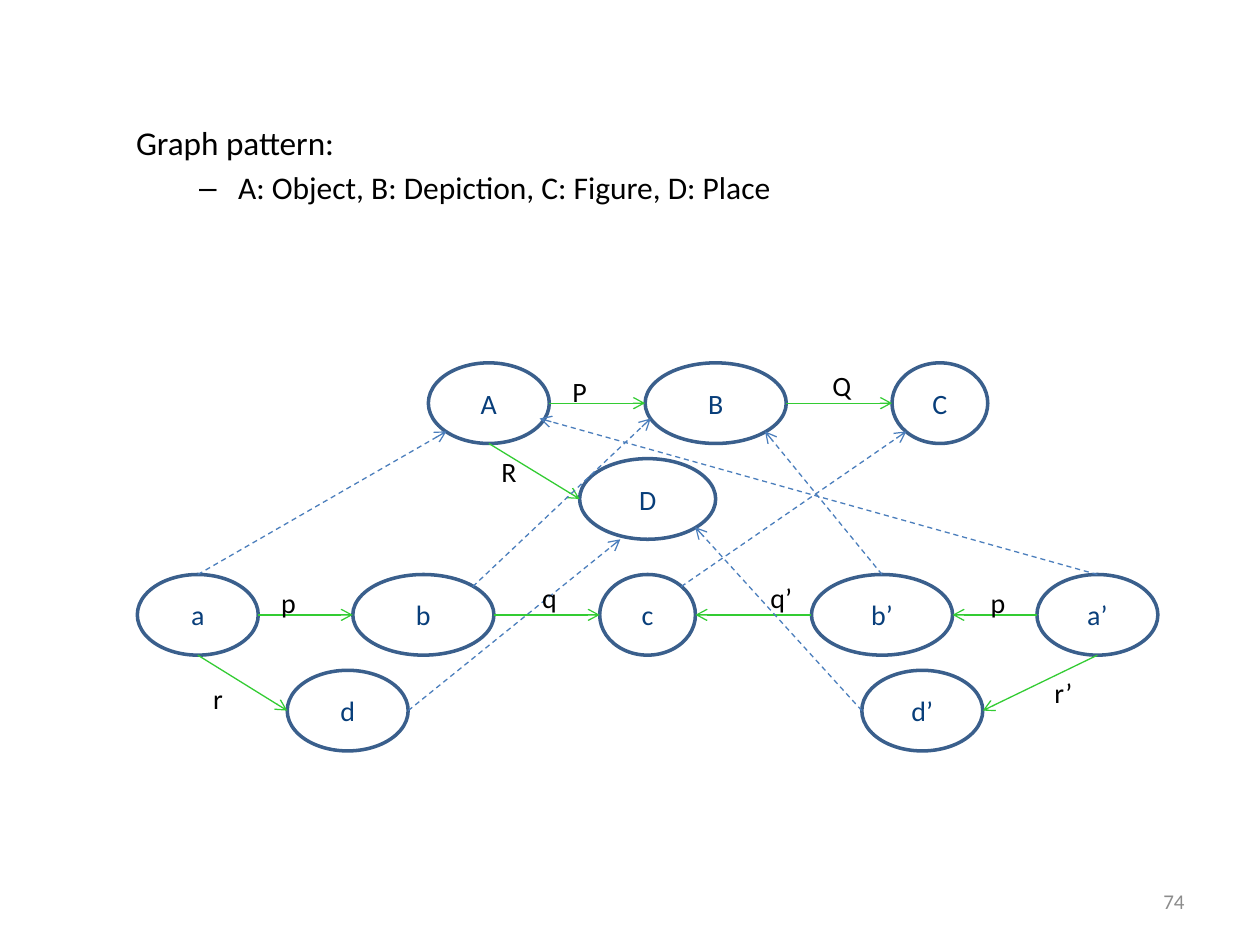
from pptx import Presentation
from pptx.dml.color import RGBColor
from pptx.enum.dml import MSO_LINE
from pptx.enum.shapes import MSO_CONNECTOR, MSO_SHAPE
from pptx.enum.text import MSO_ANCHOR, PP_ALIGN
from pptx.oxml.ns import qn
from pptx.util import Inches, Pt
from lxml.etree import SubElement

COLORS = {"text": "000000", "node": "083E7A", "outline": "3A5F8C",
          "edge": "33CC33", "mapping": "4B7EBC", "number": "8C8C8C"}
FONT = "Calibri"
NODE_H = 0.64
LABEL_H = 0.37

NODES = {
    "A": (3.4, 2.88, 0.96), "B": (5.12, 2.88, 1.12),
    "C": (7.08, 2.88, 0.76), "D": (4.6, 3.64, 1.08),
    "a": (1.09, 4.56, 0.96), "b": (2.8, 4.56, 1.12),
    "c": (4.76, 4.56, 0.76), "d": (2.28, 5.32, 0.96),
    "a’": (8.23, 4.56, 0.96), "b’": (6.44, 4.56, 1.12),
    "d’": (6.84, 5.32, 0.96),
}
TOP, LEFT, BOTTOM, RIGHT = (0.5, 0), (0, 0.5), (0.5, 1), (1, 0.5)
TOP_RIGHT, BOTTOM_LEFT, BOTTOM_RIGHT = (0.85, 0.15), (0.15, 0.85), (0.85, 0.85)

EDGES = [
    ("A", RIGHT, "B", LEFT), ("B", RIGHT, "C", LEFT), ("A", BOTTOM, "D", LEFT),
    ("a", RIGHT, "b", LEFT), ("b", RIGHT, "c", LEFT), ("a", BOTTOM, "d", LEFT),
    ("a’", LEFT, "b’", RIGHT), ("b’", LEFT, "c", RIGHT),
    ("a’", BOTTOM, "d’", RIGHT),
]
MAPPINGS = [
    ("a", TOP, "A", BOTTOM_LEFT), ("b", TOP_RIGHT, "B", (0.04, 0.69)),
    ("c", TOP_RIGHT, "C", BOTTOM_LEFT), ("d", RIGHT, "D", (0.3, 1)),
    ("b’", TOP, "B", BOTTOM_RIGHT), ("a’", TOP, "A", (0.92, 0.69)),
    ("d’", LEFT, "D", BOTTOM_RIGHT),
]
LABELS = [
    ("P", 4.04, 2.92, 1.12), ("Q", 6.12, 2.88, 1.12), ("R", 3.28, 3.56, 1.52),
    ("p", 1.73, 4.6, 1.12), ("q", 3.8, 4.56, 1.12), ("r", 0.97, 5.36, 1.52),
    ("p", 7.36, 4.6, 1.12), ("q’", 5.64, 4.56, 1.12), ("r’", 7.68, 5.31, 1.52),
]


def rgb(name):
    return RGBColor.from_string(COLORS[name])


def format_runs(p, size, color):
    for r in p.runs:
        r.font.size = Pt(size)
        r.font.name = FONT
        r.font.color.rgb = rgb(color)


def set_text(sp, text, size, color, align=PP_ALIGN.CENTER, anchor=MSO_ANCHOR.TOP):
    tf = sp.text_frame
    tf.word_wrap = True
    tf.vertical_anchor = anchor
    tf.text = text
    p = tf.paragraphs[0]
    p.alignment = align
    format_runs(p, size, color)


def add_text(s, text, x, y, w, h, size, color, **layout):
    sp = s.shapes.add_textbox(Inches(x), Inches(y), Inches(w), Inches(h))
    set_text(sp, text, size, color, **layout)


def add_node(s, name):
    x, y, w = NODES[name]
    sp = s.shapes.add_shape(MSO_SHAPE.OVAL, Inches(x), Inches(y),
                            Inches(w), Inches(NODE_H))
    sp.shadow.inherit = False
    sp.fill.background()
    sp.line.color.rgb = rgb("outline")
    sp.line.width = Pt(2)
    set_text(sp, name, 16, "node", anchor=MSO_ANCHOR.MIDDLE)


def point_on(name, site):
    x, y, w = NODES[name]
    return Inches(x + w * site[0]), Inches(y + NODE_H * site[1])


def add_arrow(s, start, start_site, end, end_site, color, dash=None):
    cx = s.shapes.add_connector(MSO_CONNECTOR.STRAIGHT,
                                *point_on(start, start_site),
                                *point_on(end, end_site))
    cx.line.color.rgb = rgb(color)
    cx.line.width = Pt(0.75)
    if dash:
        cx.line.dash_style = dash
    spPr = cx._element.spPr
    SubElement(spPr.find(qn("a:ln")), qn("a:tailEnd"), type="arrow")
    SubElement(spPr, qn("a:effectLst"))


def set_indent(p, margin, indent, bullet=None):
    pPr = p._p.get_or_add_pPr()
    pPr.set("marL", str(Inches(margin)))
    pPr.set("indent", str(Inches(indent)))
    if bullet:
        SubElement(pPr, qn("a:buChar"), char=bullet)
    else:
        SubElement(pPr, qn("a:buNone"))


def fill_body(body):
    body.left, body.top = Inches(0.98), Inches(0.92)
    body.width, body.height = Inches(8.54), Inches(5.74)
    tf = body.text_frame
    tf.text = "Graph pattern:"
    heading = tf.paragraphs[0]
    set_indent(heading, 0, 0)
    heading.space_before = Pt(0)
    format_runs(heading, 19, "text")
    p = tf.add_paragraph()
    p.text = "A: Object, B: Depiction, C: Figure, D: Place"
    p.level = 1
    set_indent(p, 0.81, -0.31, "–")
    format_runs(p, 18, "text")


def main():
    prs = Presentation()
    prs.slide_width, prs.slide_height = Inches(10), Inches(7.5)
    s = prs.slides.add_slide(prs.slide_layouts[1])
    title = s.shapes.title._element
    title.getparent().remove(title)
    fill_body(s.placeholders[1])
    for name in NODES:
        add_node(s, name)
    for edge in EDGES:
        add_arrow(s, *edge, "edge")
    for mapping in MAPPINGS:
        add_arrow(s, *mapping, "mapping", MSO_LINE.DASH)
    for text, x, y, w in LABELS:
        add_text(s, text, x, y, w, LABEL_H, 16, "text")
    add_text(s, "74", 7.17, 6.95, 2.33, 0.4, 12, "number",
             align=PP_ALIGN.RIGHT, anchor=MSO_ANCHOR.MIDDLE)
    prs.save("out.pptx")


if __name__ == "__main__":
    main()
